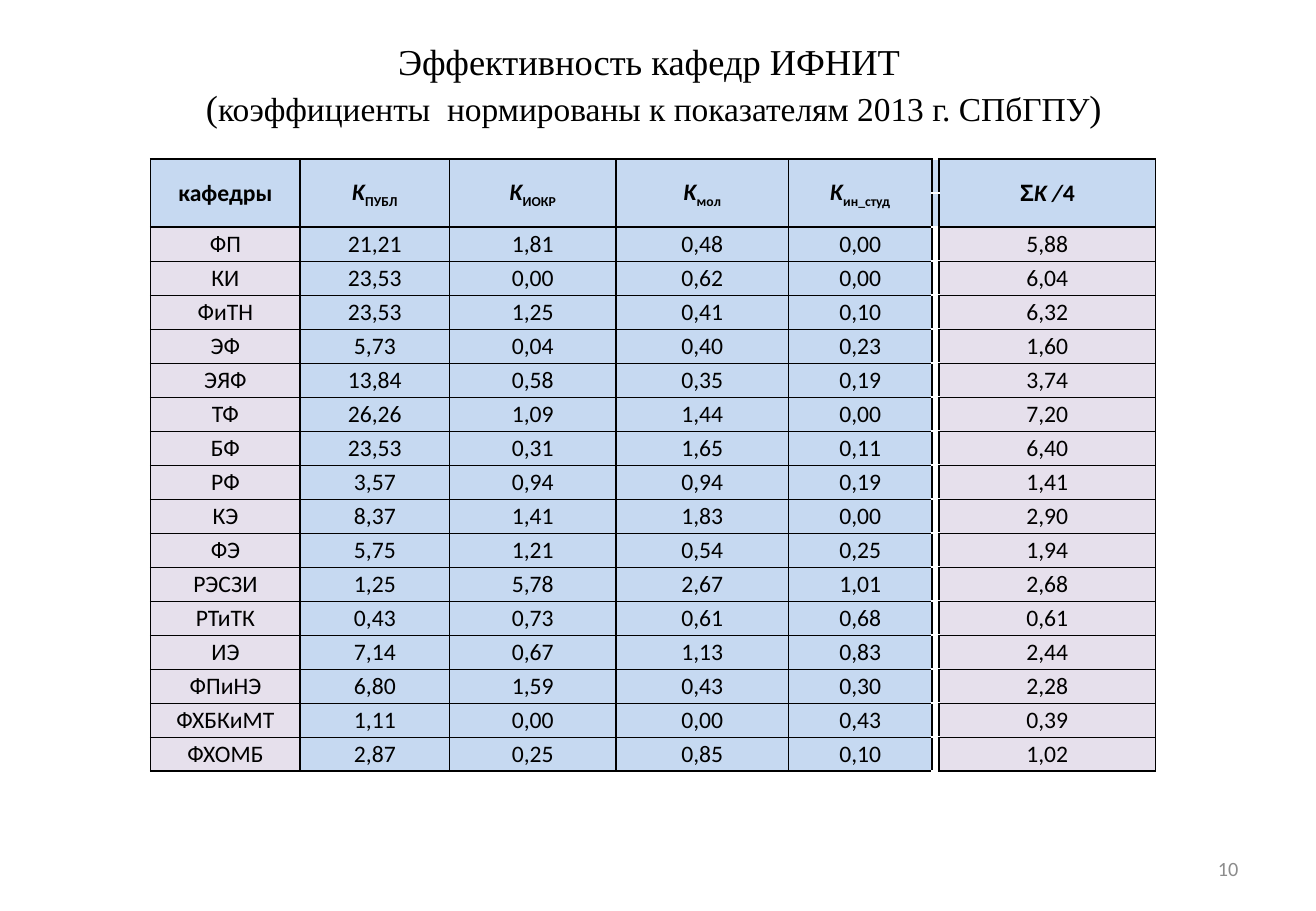
from dataclasses import dataclass

from lxml.etree import SubElement
from pptx import Presentation
from pptx.dml.color import RGBColor
from pptx.enum.text import MSO_ANCHOR, PP_ALIGN
from pptx.oxml.ns import qn
from pptx.util import Inches, Pt


@dataclass(frozen=True)
class Theme:
    ink: str = "000000"
    muted: str = "8C8C8C"
    blue: str = "C6D9F1"
    lilac: str = "E6E0EC"
    serif: str = "Times New Roman"
    sans: str = "Calibri"
    symbol: str = "Arial"
    title_size: float = 21.6
    subtitle_size: float = 19.8
    table_size: float = 14
    number_size: float = 12
    thick: float = 1
    thin: float = 0.5


THEME = Theme()
TITLE_BOX = (0.9, 0.3, 8.96, 0.77)
TABLE_BOX = (1.24, 1.31, 8.28, 5.04)
NUMBER_BOX = (7.76, 6.95, 2.53, 0.4)

COLUMN_WIDTHS = [1.23, 1.23, 1.37, 1.42, 1.18, 0.06, 1.78]
HEADER_ROWS = 2
GAP_COLUMN = 5
LILAC_COLUMNS = (0, 6)
SUBSCRIPTS = ["ПУБЛ", "ИОКР", "мол", "ин_студ"]
DEPARTMENTS = """
ФП 21,21 1,81 0,48 0,00 5,88
КИ 23,53 0,00 0,62 0,00 6,04
ФиТН 23,53 1,25 0,41 0,10 6,32
ЭФ 5,73 0,04 0,40 0,23 1,60
ЭЯФ 13,84 0,58 0,35 0,19 3,74
ТФ 26,26 1,09 1,44 0,00 7,20
БФ 23,53 0,31 1,65 0,11 6,40
РФ 3,57 0,94 0,94 0,19 1,41
КЭ 8,37 1,41 1,83 0,00 2,90
ФЭ 5,75 1,21 0,54 0,25 1,94
РЭСЗИ 1,25 5,78 2,67 1,01 2,68
РТиТК 0,43 0,73 0,61 0,68 0,61
ИЭ 7,14 0,67 1,13 0,83 2,44
ФПиНЭ 6,80 1,59 0,43 0,30 2,28
ФХБКиМТ 1,11 0,00 0,00 0,43 0,39
ФХОМБ 2,87 0,25 0,85 0,10 1,02
"""


def apply_format(target, values):
    for name, value in values.items():
        setattr(target, name, value)


def add_run(paragraph, text, size, font=THEME.sans, color=THEME.ink, baseline=0, **style):
    run = paragraph.add_run()
    run.text = text
    apply_format(run.font, {"size": Pt(size), "name": font, **style})
    run.font.color.rgb = RGBColor.from_string(color)
    if baseline:
        run.font._element.set("baseline", str(baseline * 1000))


def add_text_area(slide, box, alignment):
    frame = slide.shapes.add_textbox(*map(Inches, box)).text_frame
    apply_format(frame, {"word_wrap": True, "vertical_anchor": MSO_ANCHOR.MIDDLE})
    paragraph = frame.paragraphs[0]
    paragraph.alignment = alignment
    return paragraph


def add_title(slide, box):
    title = add_text_area(slide, box, PP_ALIGN.CENTER)
    title.line_spacing = 1.05
    add_run(title, "Эффективность кафедр ИФНИТ ", THEME.title_size, THEME.serif)
    title.add_line_break()
    add_run(title, "(", THEME.title_size, THEME.serif)
    add_run(title, "коэффициенты  нормированы к показателям 2013 г. СПбГПУ",
            THEME.subtitle_size, THEME.serif)
    add_run(title, ")", THEME.title_size, THEME.serif)


def add_page_number(slide, box):
    number = add_text_area(slide, box, PP_ALIGN.RIGHT)
    add_run(number, "10", THEME.number_size, color=THEME.muted)


def set_borders(cell, widths):
    properties = cell._tc.get_or_add_tcPr()
    for side, width in widths.items():
        line = SubElement(properties, qn(f"a:ln{side}"), w=str(Pt(width)))
        fill = SubElement(line, qn("a:solidFill"))
        SubElement(fill, qn("a:srgbClr"), val=THEME.ink)


def style_cell(cell, row, column, last_row):
    apply_format(cell, {
        "margin_left": Inches(0.01), "margin_right": Inches(0.01),
        "margin_top": Inches(0.01), "margin_bottom": 0,
        "vertical_anchor": MSO_ANCHOR.MIDDLE,
    })
    header = row < HEADER_ROWS
    borders = {"L": THEME.thick, "R": THEME.thick}
    if column != GAP_COLUMN:
        borders["T"] = THEME.thick if row <= HEADER_ROWS else THEME.thin
        borders["B"] = THEME.thick if header or row == last_row else THEME.thin
    set_borders(cell, borders)
    if column == GAP_COLUMN and not header:
        cell.fill.background()
    else:
        lilac = column in LILAC_COLUMNS and not header
        cell.fill.solid()
        cell.fill.fore_color.rgb = RGBColor.from_string(THEME.lilac if lilac else THEME.blue)


def header_runs():
    bold = {"bold": True}
    italic = {"bold": True, "italic": True}
    coefficients = [[("K", italic), (subscript, {**bold, "baseline": -25})]
                    for subscript in SUBSCRIPTS]
    total = [("Σ", {**bold, "font": THEME.symbol}), ("K /", italic), ("4", bold)]
    return [[("кафедры", bold)], *coefficients, [], total]


def department_runs(line):
    *values, total = line.split()
    return [*([(value, {})] for value in values), [], [(total, {})]]


def add_efficiency_table(slide, box):
    departments = DEPARTMENTS.strip().splitlines()
    contents = [header_runs(), [[] for _ in COLUMN_WIDTHS], *map(department_runs, departments)]
    table = slide.shapes.add_table(len(contents), len(COLUMN_WIDTHS), *map(Inches, box)).table
    apply_format(table, {"first_row": False, "horz_banding": False})
    for column, width in zip(table.columns, COLUMN_WIDTHS):
        column.width = Inches(width)
    for row in table.rows:
        row.height = Inches(box[3] / len(contents))
    for row, cells in enumerate(contents):
        for column, runs in enumerate(cells):
            cell = table.cell(row, column)
            style_cell(cell, row, column, len(contents) - 1)
            paragraph = cell.text_frame.paragraphs[0]
            paragraph.alignment = PP_ALIGN.CENTER
            for text, style in runs:
                add_run(paragraph, text, THEME.table_size, **style)
            if not runs:
                SubElement(paragraph._p, qn("a:endParaRPr"), sz=str(THEME.table_size * 100))
    for column in range(len(COLUMN_WIDTHS)):
        if column != GAP_COLUMN:
            table.cell(0, column).merge(table.cell(HEADER_ROWS - 1, column))


def main():
    presentation = Presentation()
    apply_format(presentation, {"slide_width": Inches(10.83), "slide_height": Inches(7.5)})
    slide = presentation.slides.add_slide(presentation.slide_layouts[6])
    add_title(slide, TITLE_BOX)
    add_efficiency_table(slide, TABLE_BOX)
    add_page_number(slide, NUMBER_BOX)
    presentation.save("out.pptx")


if __name__ == "__main__":
    main()
